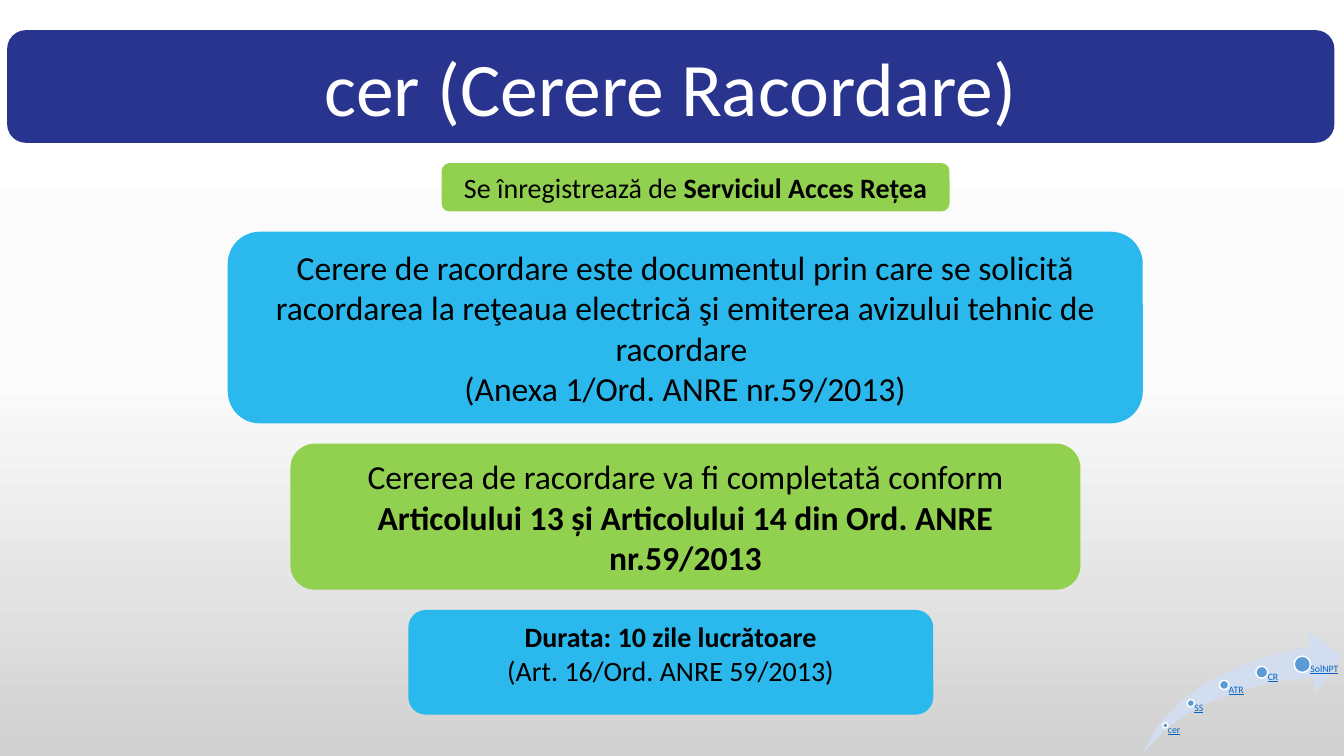
"""Build the connection request slide with its process arrow."""
from copy import deepcopy

from pptx import Presentation
from pptx.dml.color import RGBColor as Rgb
from pptx.enum.shapes import MSO_SHAPE as Geo
from pptx.enum.text import MSO_ANCHOR as Anchor, MSO_AUTO_SIZE as Fit, PP_ALIGN as Align
from pptx.oxml.ns import qn
from pptx.util import Cm, Pt

FONT = "Calibri"
HUES = {
    "navy": "29348F", "green": "92D050", "sky": "2BB8ED", "white": "FFFFFF",
    "black": "000000", "swoosh": "D2DEEF", "dot": "5B9BD5", "label": "0563C1",
}
FADE = [(0, "FFFFFF"), (0.5, "FBFBFB"), (1, "D1D1D1")]
TOP, GAP = 0.76, 0.51

# left, width, height, fill, ink, size, anchor, paragraphs of (text, bold)
BOXES = [
    (0.18, 33.45, 2.84, "navy", "white", 54, Anchor.MIDDLE,
     [[("cer (Cerere Racordare)", False)]]),
    (11.13, 12.8, 1.22, "green", "black", 20, Anchor.MIDDLE,
     [[("Se înregistrează de ", False), ("Serviciul Acces Rețea", True)]]),
    (5.74, 23.06, 4.83, "sky", "black", 24, Anchor.MIDDLE,
     [[("Cerere de racordare este documentul prin care se solicită racordarea "
        "la reţeaua electrică şi emiterea avizului tehnic de racordare ", False)],
      [("(Anexa 1/Ord. ANRE nr.59/2013)", False)]]),
    (7.32, 19.91, 3.68, "green", "black", 24, Anchor.MIDDLE,
     [[("Cererea de racordare va fi completată conform ", False),
       ("Articolului 13 și Articolului 14 din Ord. ANRE nr.59/2013", True)]]),
    (10.29, 13.23, 2.64, "sky", "black", 20, Anchor.TOP,
     [[("Durata: 10 zile lucrătoare", True)],
      [("(Art. 16/Ord. ANRE 59/2013)", False)]]),
]
SWOOSH = (28.8, 15.9, 5, 3.12)
# label, centre x, centre y, diameter, label width
STEPS = [
    ("cer", 29.37, 18.28, 0.13, 0.66),
    ("SS", 30.01, 17.72, 0.18, 0.84),
    ("ATR", 30.85, 17.26, 0.23, 0.97),
    ("CR", 31.8, 16.94, 0.3, 0.99),
    ("SolNPT", 32.82, 16.74, 0.41, 0.99),
]


def hue(name):
    return Rgb.from_string(HUES[name])


def draw(home, geo, area, fill):
    shape = home.add_shape(geo, *map(Cm, area))
    shape.shadow.inherit = False
    shape.fill.solid()
    shape.fill.fore_color.rgb = hue(fill)
    shape.line.fill.background()
    return shape


def write(para, text, size, ink, bold=False):
    run = para.add_run()
    run.text = text
    font = run.font
    font.name, font.size, font.bold = FONT, Pt(size), bold
    font.color.rgb = hue(ink)
    return run


def paint(slide):
    fill = slide.background.fill
    fill.gradient()
    fill.gradient_angle = 270
    stops = next(slide.element.iter(qn("a:gsLst")))
    stops.append(deepcopy(stops[-1]))
    for stop, (place, tone) in zip(fill.gradient_stops, FADE):
        stop.position = place
        stop.color.rgb = Rgb.from_string(tone)


def stack(slide):
    top = TOP
    for left, wide, high, fill, ink, size, anchor, paras in BOXES:
        box = draw(slide.shapes, Geo.ROUNDED_RECTANGLE, (left, top, wide, high), fill)
        frame = box.text_frame
        frame.word_wrap = True
        frame.auto_size = Fit.SHAPE_TO_FIT_TEXT
        frame.vertical_anchor = anchor
        for i, runs in enumerate(paras):
            para = frame.add_paragraph() if i else frame.paragraphs[0]
            para.alignment = Align.CENTER
            for text, bold in runs:
                write(para, text, size, ink, bold)
        top += high + GAP


def chain(slide):
    home = slide.shapes.add_group_shape().shapes
    arrow = draw(home, Geo.SWOOSH_ARROW, SWOOSH, "swoosh")
    arrow.adjustments[0] = arrow.adjustments[1] = 0.25
    base = SWOOSH[1] + SWOOSH[3]
    for text, x, y, size, wide in STEPS:
        half = size / 2
        dot = draw(home, Geo.OVAL, (x - half, y - half, size, size), "dot")
        dot.line.color.rgb = hue("white")
        dot.line.width = Pt(1)
        frame = home.add_textbox(Cm(x), Cm(y), Cm(wide), Cm(base - y)).text_frame
        frame.word_wrap = True
        frame.margin_left = Cm(half)
        frame.margin_top = frame.margin_right = frame.margin_bottom = 0
        para = frame.paragraphs[0]
        para.line_spacing = 0.9
        write(para, text, 7, "label").font.underline = True


def main():
    deck = Presentation()
    deck.slide_width, deck.slide_height = Cm(33.87), Cm(19.05)
    slide = deck.slides.add_slide(deck.slide_layouts[6])
    paint(slide)
    stack(slide)
    chain(slide)
    deck.save("out.pptx")


if __name__ == "__main__":
    main()
